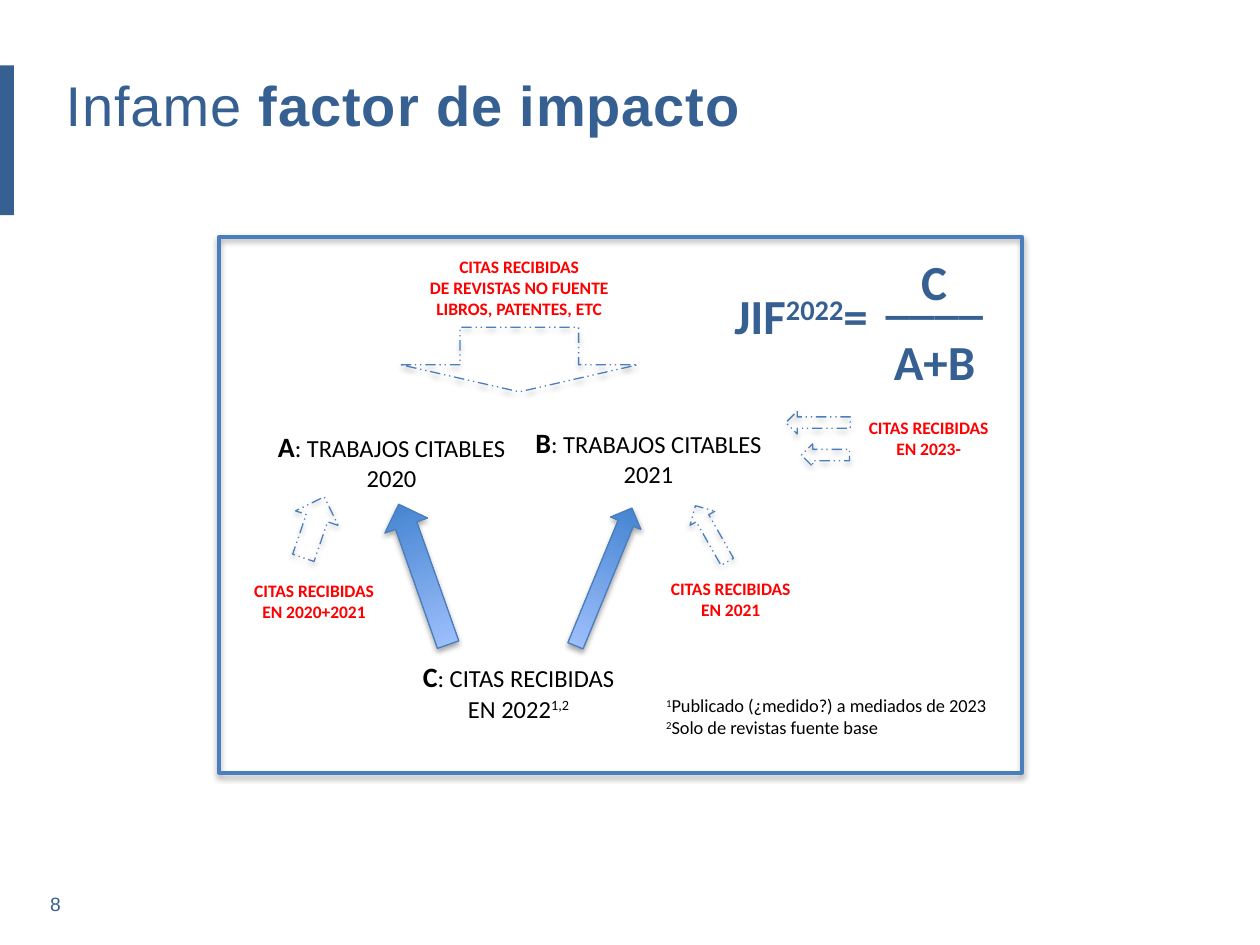
from typing import NamedTuple

from lxml import etree
from pptx import Presentation
from pptx.dml.color import RGBColor
from pptx.enum.dml import MSO_LINE
from pptx.enum.shapes import MSO_SHAPE
from pptx.enum.text import MSO_ANCHOR, MSO_AUTO_SIZE, PP_ALIGN
from pptx.oxml.ns import qn
from pptx.util import Cm, Pt

RECTANGLE, DOWN_ARROW = MSO_SHAPE.RECTANGLE, MSO_SHAPE.DOWN_ARROW
DASHED = MSO_LINE.DASH_DOT_DOT
TOP, MIDDLE = MSO_ANCHOR.TOP, MSO_ANCHOR.MIDDLE
LEFT, CENTER = PP_ALIGN.LEFT, PP_ALIGN.CENTER
NO_AUTOFIT = MSO_AUTO_SIZE.NONE

NAVY, OUTLINE, BLACK, RED = "376092", "4B7EBC", "000000", "FF0000"
GRADIENT = ("3F80CE", "A4C4FF")

TITLE = {"name": "Arial", "size": Pt(32), "bold": False, "color": NAVY}
NUMBER = {"name": "Arial", "size": Pt(11), "color": NAVY}
FORMULA = {"name": "Calibri", "size": Pt(28), "bold": True, "color": NAVY}
TERM = {"name": "Calibri", "size": Pt(14), "bold": False, "color": BLACK}
NOTE = {"name": "Calibri", "size": Pt(10.5), "color": BLACK}
EXCLUDED = {"name": "Calibri", "size": Pt(10), "bold": True, "color": RED}
BOLD = {"bold": True}
LETTER = {"bold": True, "size": Pt(16)}
RAISED = {"baseline": "30000"}


class Place(NamedTuple):
    """Left, top, width and height in centimetres."""
    left: float
    top: float
    width: float
    height: float


class Span(NamedTuple):
    text: str
    changes: dict = {}


class Label(NamedTuple):
    place: Place
    style: dict
    lines: list[list[Span]]
    align: PP_ALIGN = CENTER
    anchor: MSO_ANCHOR = TOP


class Arrow(NamedTuple):
    place: Place
    rotation: float
    counted: bool = False
    head: float = 0.5


def excluded(place: Place, *lines: str) -> Label:
    """Label for citations that the formula leaves out."""
    return Label(place, EXCLUDED, [[Span(line)] for line in lines])


def term(place: Place, letter: str, meaning: str, *second: Span) -> Label:
    return Label(place, TERM, [[Span(letter, LETTER), Span(f": {meaning}")], list(second)])


LABELS = [
    Label(Place(14.43, 5.64, 3.66, 1.45), FORMULA,
          [[Span("JIF"), Span("2022", RAISED), Span("= ")]]),
    Label(Place(18.31, 4.93, 1.04, 1.45), FORMULA, [[Span("C")]], anchor=MIDDLE),
    Label(Place(17.58, 5.21, 2.51, 1.45), FORMULA, [[Span("____")]], anchor=MIDDLE),
    Label(Place(17.75, 6.55, 2.18, 1.45), FORMULA, [[Span("A+B")]], anchor=MIDDLE),
    term(Place(5.33, 8.53, 5.13, 1.55), "A", "TRABAJOS CITABLES", Span("2020")),
    term(Place(10.52, 8.46, 5.11, 1.55), "B", "TRABAJOS CITABLES", Span("2021")),
    term(Place(8.26, 13.18, 4.39, 1.55), "C", "CITAS RECIBIDAS",
         Span("EN 2022"), Span("1,2", RAISED)),
    Label(Place(13.18, 13.87, 7.09, 1.14), NOTE,
          [[Span("1", RAISED), Span("Publicado (¿medido?) a mediados de 2023")],
           [Span("2", RAISED), Span("Solo de revistas fuente base")]], LEFT),
    excluded(Place(4.83, 11.56, 3, 1.12), "CITAS RECIBIDAS", "EN 2020+2021"),
    excluded(Place(13.23, 11.53, 3, 1.12), "CITAS RECIBIDAS", "EN 2021"),
    excluded(Place(17.22, 8.28, 3, 1.12), "CITAS RECIBIDAS", "EN 2023-"),
    excluded(Place(8.33, 5.03, 4.27, 1.55),
             "CITAS RECIBIDAS", "DE REVISTAS NO FUENTE", "LIBROS, PATENTES, ETC"),
]

ARROWS = [
    Arrow(Place(8.08, 10.08, 0.91, 3), 160.6, counted=True),
    Arrow(Place(11.84, 10.13, 0.66, 3), 202.3, counted=True),
    Arrow(Place(5.87, 9.98, 0.91, 1.3), 198.9),
    Arrow(Place(14.05, 10.11, 0.58, 1.3), 150.4),
    Arrow(Place(16.26, 7.87, 0.46, 1.3), 90),
    Arrow(Place(16.41, 8.69, 0.46, 0.97), 90),
    Arrow(Place(8.08, 6.6, 4.78, 1.3), 0, head=0.42),
]


def rgb(color: str) -> RGBColor:
    return RGBColor.from_string(color)


def lengths(place: Place) -> list[Cm]:
    return [Cm(value) for value in place]


def format_span(span, style: dict) -> None:
    for name, value in style.items():
        if name == "color":
            span.font.color.rgb = rgb(value)
        elif name in ("baseline", "spc"):
            span.font._element.set(name, value)
        else:
            setattr(span.font, name, value)


def write(frame, label: Label, wrap: bool = False) -> None:
    settings = {"word_wrap": wrap, "auto_size": NO_AUTOFIT, "vertical_anchor": label.anchor}
    for name, value in settings.items():
        setattr(frame, name, value)
    for index, line in enumerate(label.lines):
        para = frame.add_paragraph() if index else frame.paragraphs[0]
        para.alignment = label.align
        for part in line:
            span = para.add_run()
            span.text = part.text
            format_span(span, {**label.style, **part.changes})


def add_label(page, label: Label) -> None:
    box = page.shapes.add_textbox(*lengths(label.place))
    write(box.text_frame, label)


def add_shadow(shape) -> None:
    shape.shadow.inherit = False
    effects = shape._element.spPr.find(qn("a:effectLst"))
    shadow = etree.SubElement(effects, qn("a:outerShdw"), blurRad="40000",
                              dist="23000", dir="5400000", rotWithShape="0")
    color = etree.SubElement(shadow, qn("a:srgbClr"), val=BLACK)
    etree.SubElement(color, qn("a:alpha"), val="35000")


def add_outlined(page, kind: MSO_SHAPE, place: Place, width: float):
    """Add an unfilled shape with a blue outline and a soft shadow."""
    shape = page.shapes.add_shape(kind, *lengths(place))
    shape.fill.background()
    shape.line.color.rgb = rgb(OUTLINE)
    shape.line.width = Pt(width)
    add_shadow(shape)
    return shape


def add_arrow(page, arrow: Arrow) -> None:
    shape = add_outlined(page, DOWN_ARROW, arrow.place, 0.75)
    shape.rotation = arrow.rotation
    shape.adjustments[1] = arrow.head
    if arrow.counted:
        shape.fill.gradient()
        shape.fill.gradient_angle = 90
        for stop, color in zip(shape.fill.gradient_stops, GRADIENT):
            stop.color.rgb = rgb(color)
    else:
        shape.line.dash_style = DASHED


def add_title(page) -> None:
    title = page.shapes.title
    title.left, title.top, title.width, title.height = lengths(Place(1.07, 1.3, 23.27, 1.63))
    words = [Span("Infame "), Span("factor de impacto", BOLD)]
    write(title.text_frame, Label(None, {**TITLE, "spc": "50"}, [words], LEFT), wrap=True)


def add_side_bar(page) -> None:
    bar = page.shapes.add_shape(RECTANGLE, *lengths(Place(0, 1.32, 0.28, 3.02)))
    bar.fill.solid()
    bar.fill.fore_color.rgb = rgb(NAVY)
    bar.line.fill.background()
    bar.shadow.inherit = False


def main() -> None:
    deck = Presentation()
    deck.slide_width, deck.slide_height = Cm(25.4), Cm(19.05)
    page = deck.slides.add_slide(deck.slide_layouts[5])
    add_side_bar(page)
    add_title(page)
    add_label(page, Label(Place(0.76, 17.86, 24.26, 0.74), NUMBER, [[Span("8")]], LEFT, TOP))
    for arrow in ARROWS:
        add_arrow(page, arrow)
    for label in LABELS:
        add_label(page, label)
    add_outlined(page, RECTANGLE, Place(4.42, 4.78, 16.18, 10.8), 2.25)
    deck.save("out.pptx")


if __name__ == "__main__":
    main()
